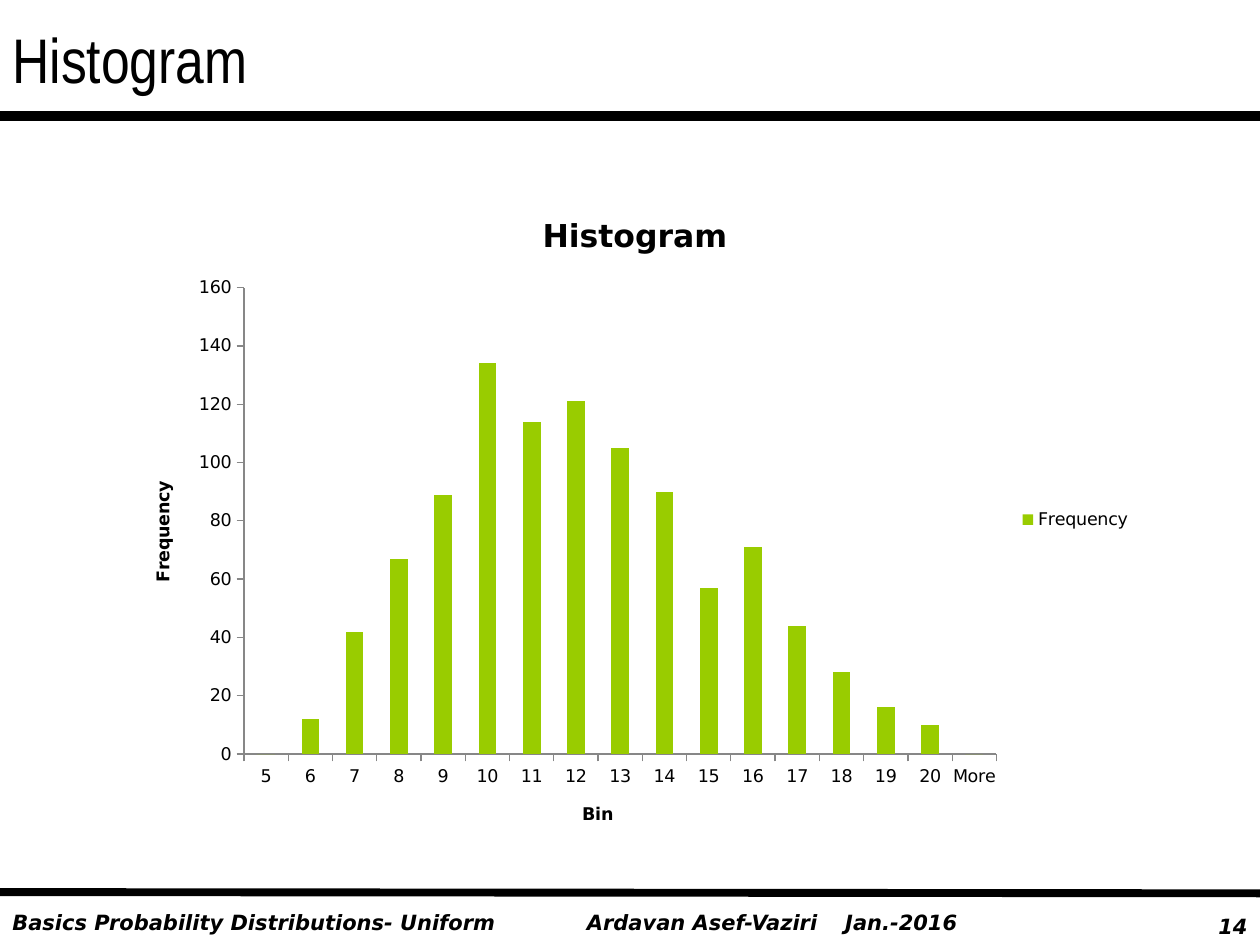
from lxml import etree
from pptx import Presentation
from pptx.chart.data import CategoryChartData
from pptx.dml.color import RGBColor
from pptx.enum import chart as ch, shapes, text
from pptx.oxml.ns import qn
from pptx.util import Inches, Pt

BLACK = RGBColor(0, 0, 0)
GREEN = RGBColor(0x99, 0xCC, 0x00)
GRAY = RGBColor(0x87, 0x87, 0x87)
TITLE_FONT, BODY_FONT = "Arial Narrow", "DejaVu Sans"
WIDTH, HEIGHT = 10, 7.5
HEADER = 0.92
LEFT, RIGHT = text.PP_ALIGN.LEFT, text.PP_ALIGN.RIGHT

TITLE = "Histogram"
# text, left, top, width, alignment
FOOTERS = [
    ("Basics Probability Distributions- Uniform", 0, 7.17, 4.67, LEFT),
    ("Ardavan Asef-Vaziri\tJan.-2016", 4.56, 7.17, 3.35, LEFT),
    ("14", 9.25, 7.2, 0.75, RIGHT),
]
DATE_TAB = 2.05
# start height, end height, weight in points
RULES = [(HEADER, HEADER, 6), (7.08, 7.09, 4.5)]
BINS = [str(n) for n in range(5, 21)] + ["More"]
FREQUENCIES = [0, 12, 42, 67, 89, 134, 114, 121, 105, 90, 57, 71, 44, 28, 16, 10, 0]


def style(font, size, name=BODY_FONT, bold=False, italic=False):
    font.size, font.name = Pt(size), name
    font.bold, font.italic = bold, italic
    font.color.rgb = BLACK


def add_text(slide, words, left, top, width, height, align=LEFT):
    box = slide.shapes.add_textbox(*map(Inches, (left, top, width, height)))
    tf = box.text_frame
    tf.word_wrap = True
    tf.vertical_anchor = text.MSO_ANCHOR.MIDDLE
    p = tf.paragraphs[0]
    p.text, p.alignment = words, align
    return p


def add_tab_stop(p, inches):
    tabs = etree.SubElement(p._p.get_or_add_pPr(), qn("a:tabLst"))
    etree.SubElement(tabs, qn("a:tab"), pos=str(Inches(inches)), algn="l")


def add_rule(slide, start, end, weight):
    line = slide.shapes.add_connector(
        shapes.MSO_CONNECTOR.STRAIGHT, 0, Inches(start), Inches(WIDTH), Inches(end))
    line.line.color.rgb = BLACK
    line.line.width = Pt(weight)
    etree.SubElement(line._element.spPr, qn("a:effectLst"))


def set_title(owner, words, size):
    """Title a chart or an axis."""
    owner.has_title = True
    title = owner.chart_title if hasattr(owner, "chart_title") else owner.axis_title
    p = title.text_frame.paragraphs[0]
    p.text = words
    style(p.font, size, bold=True)


def add_histogram(slide):
    data = CategoryChartData()
    data.categories = BINS
    data.add_series("Frequency", FREQUENCIES)
    chart = slide.shapes.add_chart(
        ch.XL_CHART_TYPE.COLUMN_CLUSTERED,
        *map(Inches, (1, 1.5, 8.08, 5.25)), data).chart
    style(chart.font, 10)
    set_title(chart, TITLE, 18)
    chart.has_legend = True
    chart.legend.position = ch.XL_LEGEND_POSITION.RIGHT
    chart.legend.include_in_layout = False

    for axis, words in ((chart.category_axis, "Bin"), (chart.value_axis, "Frequency")):
        set_title(axis, words, 10)
        axis.has_major_gridlines = False
        axis.major_tick_mark = ch.XL_TICK_MARK.OUTSIDE
        axis.format.line.color.rgb = GRAY

    plot = chart.plots[0]
    plot.gap_width, plot.vary_by_categories = 150, False
    fill = plot.series[0].format.fill
    fill.solid()
    fill.fore_color.rgb = GREEN


def main():
    prs = Presentation()
    prs.slide_width, prs.slide_height = Inches(WIDTH), Inches(HEIGHT)
    slide = prs.slides.add_slide(prs.slide_layouts[6])

    for words, left, top, width, align in FOOTERS:
        p = add_text(slide, words, left, top, width, 0.3, align)
        style(p.font, 12, bold=True, italic=True)
        if "\t" in words:
            add_tab_stop(p, DATE_TAB)
    for rule in RULES:
        add_rule(slide, *rule)
    style(add_text(slide, TITLE, 0, 0, WIDTH, HEADER).font, 36, TITLE_FONT)
    add_histogram(slide)
    prs.save("out.pptx")


if __name__ == "__main__":
    main()
